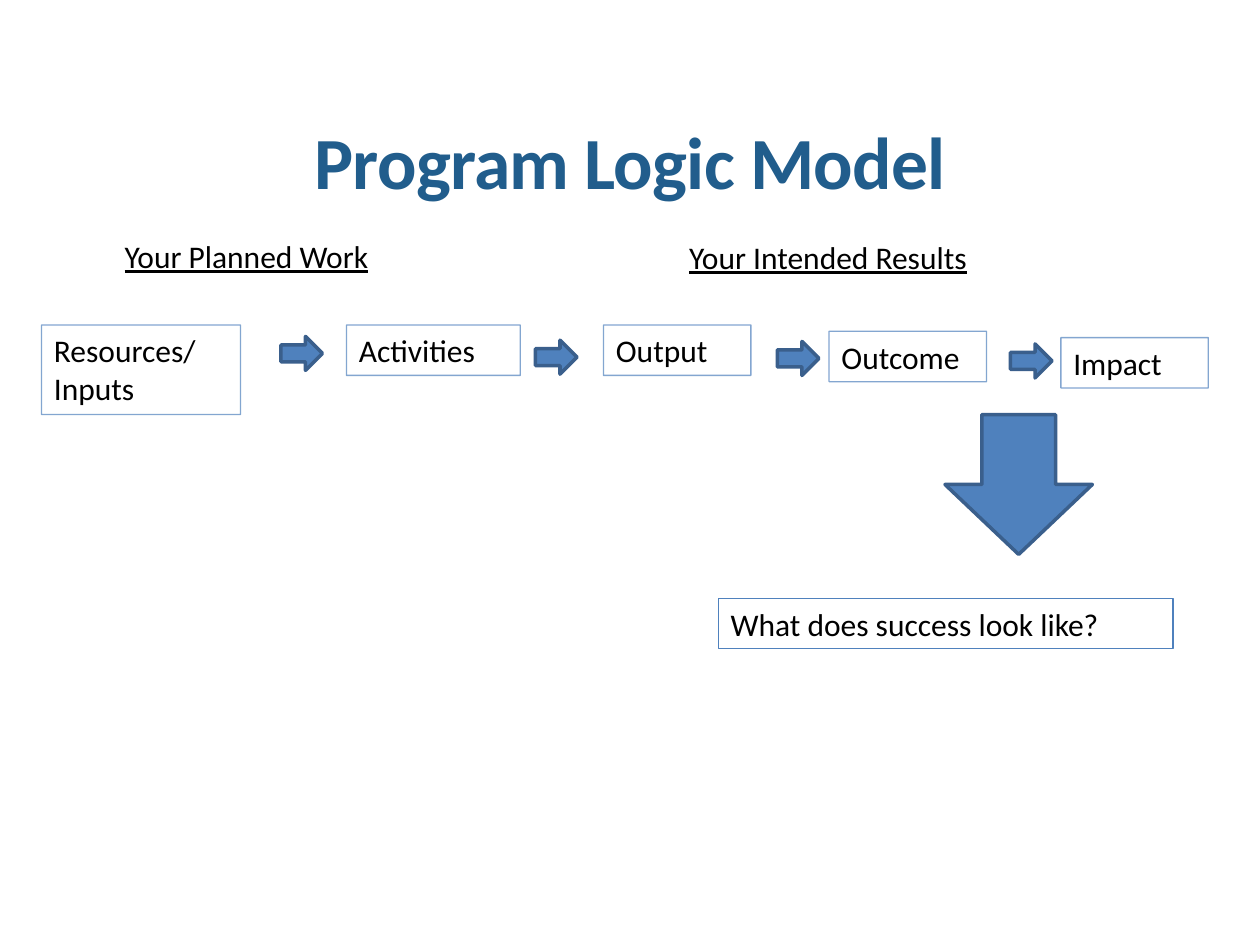
from lxml.etree import SubElement
from pptx import Presentation
from pptx.dml.color import RGBColor
from pptx.enum.shapes import MSO_SHAPE as Shape
from pptx.enum.text import MSO_ANCHOR as Anchor, MSO_AUTO_SIZE as AutoSize, PP_ALIGN as Align
from pptx.oxml.ns import qn
from pptx.util import Inches, Pt

COLORS = {"title": "215D8C", "text": "000000", "accent": "4F81BD", "edge": "3A5F8C"}
TITLE_FONT = {"name": "Calibri", "size": Pt(42), "bold": True}
BODY_FONT = {"name": "Calibri", "size": Pt(18)}
HEADING_FONT = {**BODY_FONT, "underline": True}
TITLE_FRAME = {"margin_left": 0, "margin_top": 0, "margin_right": 0, "margin_bottom": 0,
               "vertical_anchor": Anchor.TOP, "word_wrap": True, "auto_size": AutoSize.NONE}
BOX_FRAME = {"word_wrap": True, "auto_size": AutoSize.SHAPE_TO_FIT_TEXT}

HEADINGS = [
    ("Your Planned Work", (0.89, 1.83, 2.67, 0.4)),
    ("Your Intended Results", (5.37, 1.84, 2.88, 0.4)),
]
STAGES = [
    ("Resources/ Inputs", (0.33, 2.58, 1.58, 0.71)),
    ("Activities", (2.75, 2.58, 1.38, 0.4)),
    ("Output", (4.79, 2.58, 1.17, 0.4)),
    ("Outcome", (6.58, 2.63, 1.25, 0.4)),
    ("Impact", (8.42, 2.68, 1.17, 0.4)),
]
STEP_ARROWS = [(2.23, 2.67), (4.25, 2.7), (6.17, 2.71), (8.02, 2.73)]


def color(name):
    """Return the named palette colour."""
    return RGBColor.from_string(COLORS[name])


def apply_format(target, values):
    """Set each format value on the target."""
    for key, value in values.items():
        setattr(target, key, value)


def write_text(frame, text, font, color_name):
    """Write one formatted paragraph and return its run."""
    span = frame.paragraphs[0].add_run()
    span.text = text
    apply_format(span.font, font)
    span.font.color.rgb = color(color_name)
    return span


def set_title(page, text):
    """Move, format and fill the title placeholder."""
    title = page.shapes.title
    apply_format(title, {"left": Inches(0.5), "top": Inches(0.92),
                         "width": Inches(9), "height": Inches(1.25)})
    apply_format(title.text_frame, TITLE_FRAME)
    span = write_text(title.text_frame, text, TITLE_FONT, "title")
    span.font._element.set("spc", "-40")
    title.text_frame.paragraphs[0].alignment = Align.CENTER


def add_label(page, text, bounds, font=BODY_FONT):
    """Add a wrapping text box."""
    box = page.shapes.add_textbox(*map(Inches, bounds))
    apply_format(box.text_frame, BOX_FRAME)
    write_text(box.text_frame, text, font, "text")
    return box


def add_outlined_label(page, text, bounds, opacity=100):
    """Add a text box with a thin accent outline."""
    box = add_label(page, text, bounds)
    box.line.color.rgb = color("accent")
    box.line.width = Pt(0.75)
    if opacity < 100:
        tint = box.line._ln.find(".//" + qn("a:srgbClr"))
        SubElement(tint, qn("a:alpha"), val=str(opacity * 1000))


def add_arrow(page, kind, bounds):
    """Add a filled block arrow."""
    arrow = page.shapes.add_shape(kind, *map(Inches, bounds))
    arrow.shadow.inherit = False
    arrow.fill.solid()
    arrow.fill.fore_color.rgb = color("accent")
    arrow.line.color.rgb = color("edge")
    arrow.line.width = Pt(2)


def main():
    """Build and save the logic model slide."""
    deck = Presentation()
    deck.slide_width, deck.slide_height = Inches(10), Inches(7.5)
    page = deck.slides.add_slide(deck.slide_layouts.get_by_name("Title Only"))
    set_title(page, "Program Logic Model")
    for text, bounds in HEADINGS:
        add_label(page, text, bounds, HEADING_FONT)
    for text, bounds in STAGES:
        add_outlined_label(page, text, bounds, opacity=70)
    for left, top in STEP_ARROWS:
        add_arrow(page, Shape.RIGHT_ARROW, (left, top, 0.33, 0.27))
    add_outlined_label(page, "What does success look like?", (5.7, 4.75, 3.61, 0.4))
    add_arrow(page, Shape.DOWN_ARROW, (7.5, 3.29, 1.17, 1.11))
    deck.save("out.pptx")


if __name__ == "__main__":
    main()
